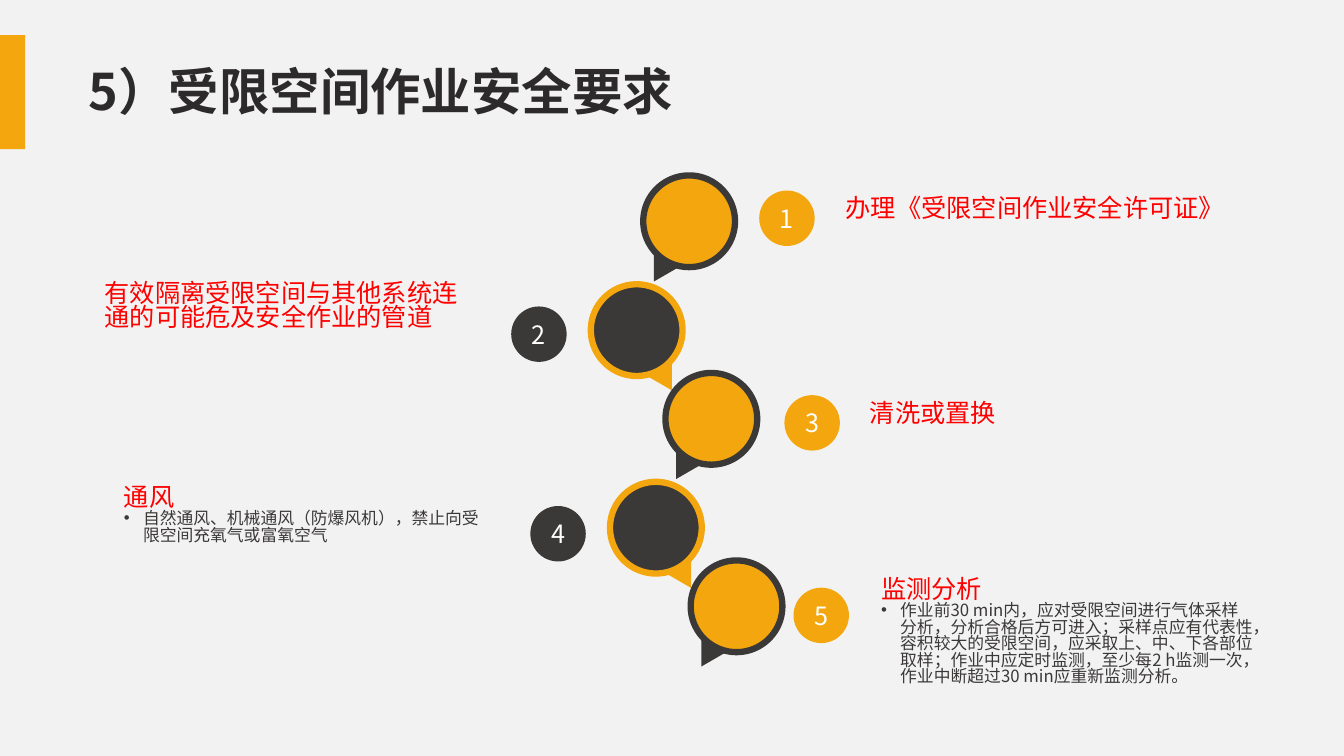
from dataclasses import dataclass

import pptx
import pptx.dml.color
import pptx.enum.shapes
import pptx.enum.text
import pptx.util
from lxml import etree
from pptx.dml.color import RGBColor
from pptx.util import Inches

ORANGE = RGBColor(0xF3, 0xA6, 0x0D)
DARK = RGBColor(0x3B, 0x38, 0x38)
RED = RGBColor(0xFF, 0x00, 0x00)
WHITE = RGBColor(0xFF, 0xFF, 0xFF)
TITLE_COLOR = RGBColor(0x2C, 0x2A, 0x2A)
BACKGROUND = RGBColor(0xF2, 0xF2, 0xF2)
FONT = "Noto Sans CJK SC"
A_NS = "http://schemas.openxmlformats.org/drawingml/2006/main"

BUBBLE = 0.91
BADGE = 0.55
TAIL_W, TAIL_H = 0.3, 0.26
SHAPE = pptx.enum.shapes.MSO_SHAPE


@dataclass(frozen=True)
class Step:
    number: int
    bubble: tuple[float, float]
    badge: tuple[float, float]
    box: tuple[float, float, float, float]
    heading: str
    detail: str = ""

    @property
    def on_right(self) -> bool:
        return self.number % 2 == 1


STEPS = [
    Step(1, (6.38, 1.74), (7.53, 1.89), (8.29, 1.91, 4.25, 1.12),
         "办理《受限空间作业安全许可证》"),
    Step(2, (5.86, 2.82), (5.07, 3.04), (0.94, 2.75, 3.85, 1.31),
         "有效隔离受限空间与其他系统连通的可能危及安全作业的管道"),
    Step(3, (6.6, 3.7), (7.78, 3.92), (8.53, 3.95, 4.12, 1.03),
         "清洗或置换"),
    Step(4, (6.05, 4.78), (5.26, 5.02), (1.13, 4.78, 3.85, 1.31),
         "通风",
         "自然通风、机械通风（防爆风机），禁止向受限空间充氧气或富氧空气"),
    Step(5, (6.85, 5.56), (7.87, 5.83), (8.64, 5.69, 3.9, 1.31),
         "监测分析",
         "作业前30 min内，应对受限空间进行气体采样分析，分析合格后方可进入；"
         "采样点应有代表性，容积较大的受限空间，应采取上、中、下各部位取样；"
         "作业中应定时监测，至少每2 h监测一次，作业中断超过30 min应重新监测分析。"),
]


def add_run(p, text: str, size: float, color: RGBColor, bold: bool = False) -> None:
    r = p.add_run()
    r.text = text
    r.font.size = pptx.util.Pt(size)
    r.font.bold = bold
    r.font.color.rgb = color
    r.font.name = FONT
    etree.SubElement(r.font._element, f"{{{A_NS}}}ea", typeface=FONT)


def add_filled(s, kind, left: float, top: float, width: float, height: float,
               fill: RGBColor):
    sp = s.shapes.add_shape(kind, Inches(left), Inches(top),
                            Inches(width), Inches(height))
    sp.shadow.inherit = False
    sp.fill.solid()
    sp.fill.fore_color.rgb = fill
    sp.line.fill.background()
    return sp


def add_bubble(s, step: Step) -> None:
    """Ringed circle whose tail points down towards the next step."""
    left, top = step.bubble
    fill, ring = (ORANGE, DARK) if step.on_right else (DARK, ORANGE)
    circle = add_filled(s, SHAPE.OVAL, left, top, BUBBLE, BUBBLE, fill)
    circle.line.color.rgb = ring
    circle.line.width = pptx.util.Pt(4.5)
    tail_left = left + (0.02 if step.on_right else BUBBLE - TAIL_W - 0.02)
    tail = add_filled(s, SHAPE.ISOSCELES_TRIANGLE, tail_left, top + 0.81,
                      TAIL_W, TAIL_H, ring)
    tail.rotation = 210 if step.on_right else 150


def add_badge(s, step: Step) -> None:
    sp = add_filled(s, SHAPE.OVAL, *step.badge, BADGE, BADGE,
                    ORANGE if step.on_right else DARK)
    tf = sp.text_frame
    tf.vertical_anchor = pptx.enum.text.MSO_ANCHOR.MIDDLE
    p = tf.paragraphs[0]
    p.alignment = pptx.enum.text.PP_ALIGN.CENTER
    add_run(p, str(step.number), 18, WHITE)


def add_bullet(p) -> None:
    pPr = p._p.get_or_add_pPr()
    pPr.set("marL", str(Inches(0.19)))
    pPr.set("indent", str(-Inches(0.19)))
    etree.SubElement(pPr, f"{{{A_NS}}}buFont", typeface="Arial")
    etree.SubElement(pPr, f"{{{A_NS}}}buChar", char="•")


def add_description(s, step: Step) -> None:
    tf = s.shapes.add_textbox(*(Inches(v) for v in step.box)).text_frame
    tf.word_wrap = True
    p = tf.paragraphs[0]
    p.line_spacing = 0.82
    add_run(p, step.heading, 18, RED)
    if step.detail:
        p = tf.add_paragraph()
        p.line_spacing = 0.82
        add_bullet(p)
        add_run(p, step.detail, 12, DARK)


def add_title(s, text: str) -> None:
    sp = s.shapes.title
    sp.left, sp.top = Inches(0.78), Inches(0.42)
    sp.width, sp.height = Inches(8.75), Inches(1.02)
    tf = sp.text_frame
    tf.word_wrap = True
    tf.auto_size = pptx.enum.text.MSO_AUTO_SIZE.NONE
    tf.vertical_anchor = pptx.enum.text.MSO_ANCHOR.MIDDLE
    p = tf.paragraphs[0]
    p.alignment = pptx.enum.text.PP_ALIGN.LEFT
    p.line_spacing = 0.9
    add_run(p, text, 36, TITLE_COLOR, bold=True)


def main() -> None:
    prs = pptx.Presentation()
    prs.slide_width, prs.slide_height = Inches(13.33), Inches(7.5)
    s = prs.slides.add_slide(prs.slide_layouts[5])
    s.background.fill.solid()
    s.background.fill.fore_color.rgb = BACKGROUND

    add_title(s, "5）受限空间作业安全要求")
    add_filled(s, SHAPE.RECTANGLE, -0.01, 0.35, 0.26, 1.13, ORANGE)
    for step in STEPS:
        add_bubble(s, step)
        add_badge(s, step)
        add_description(s, step)
    prs.save("out.pptx")


if __name__ == "__main__":
    main()
